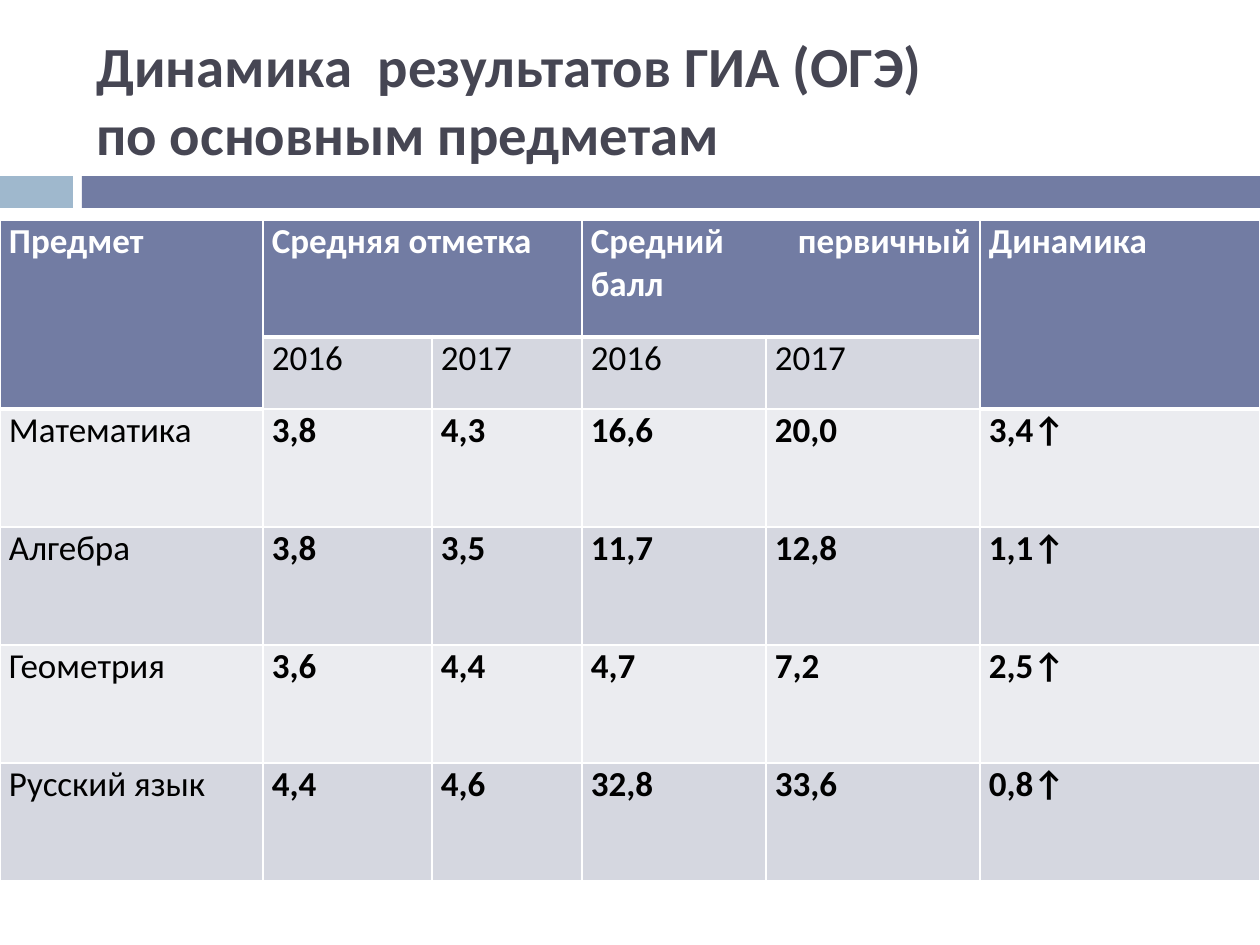
from lxml import etree
from pptx import Presentation
from pptx.dml.color import RGBColor as RGB
from pptx.enum.shapes import MSO_SHAPE as SHAPE
from pptx.enum.text import MSO_ANCHOR as ANCHOR, PP_ALIGN as ALIGN
from pptx.oxml.ns import qn
from pptx.util import Pt

EMU_PER_PX = 7257.143
FONT = "Calibri"
COLORS = {
    "title": "464653", "accent": "9FB8CD", "header": "727CA3",
    "band_dark": "D5D7E0", "band_light": "EBECF0",
    "white": "FFFFFF", "black": "000000",
}


def px(n):
    return round(n * EMU_PER_PX)


def set_border(cell, side, width):
    """Draw one white edge of a cell; side is L, R, T or B, width in points."""
    ln = etree.SubElement(cell._tc.get_or_add_tcPr(), qn(f"a:ln{side}"), w=str(Pt(width)))
    fill = etree.SubElement(ln, qn("a:solidFill"))
    etree.SubElement(fill, qn("a:srgbClr"), val=COLORS["white"])


prs = Presentation()
prs.slide_width, prs.slide_height = px(1260), px(945)
s = prs.slides.add_slide(prs.slide_layouts[6])

# Divider bar under the title
for left, width, color in [(0, 73, "accent"), (82, 1178, "header")]:
    sp = s.shapes.add_shape(SHAPE.RECTANGLE, px(left), px(176), px(width), px(32))
    sp.shadow.inherit = False
    sp.fill.solid()
    sp.fill.fore_color.rgb = RGB.from_string(COLORS[color])
    sp.line.fill.background()

# Title
tf = s.shapes.add_textbox(px(84), px(31), px(1124), px(136)).text_frame
tf.word_wrap = True
tf.vertical_anchor = ANCHOR.MIDDLE
p = tf.paragraphs[0]
p.text = "Динамика  результатов ГИА (ОГЭ)\vпо основным предметам"
for r in p.runs:
    r.font.name, r.font.size, r.font.bold = FONT, Pt(32.4), True
    r.font.color.rgb = RGB.from_string(COLORS["title"])

# Results table
rows = [
    ["Предмет", "Средняя отметка", "", "Средний первичный балл", "", "Динамика"],
    ["", "2016", "2017", "2016", "2017", ""],
    ["Математика", "3,8", "4,3", "16,6", "20,0", "3,4↑"],
    ["Алгебра", "3,8", "3,5", "11,7", "12,8", "1,1↑"],
    ["Геометрия", "3,6", "4,4", "4,7", "7,2", "2,5↑"],
    ["Русский язык", "4,4", "4,6", "32,8", "33,6", "0,8↑"],
]
col_widths = [263, 169, 150, 184, 214, 280]
row_heights = [117, 72] + [118] * 4
table = s.shapes.add_table(len(rows), len(col_widths), 0, px(220),
                           px(sum(col_widths)), px(sum(row_heights))).table
for col, width in zip(table.columns, col_widths):
    col.width = px(width)
for row, height in zip(table.rows, row_heights):
    row.height = px(height)

for i, texts in enumerate(rows):
    for j, text in enumerate(texts):
        cell = table.cell(i, j)
        header_depth = 2 if j in (0, 5) else 1
        is_header = i < header_depth
        cell.margin_left = cell.margin_right = px(9)
        cell.margin_top = cell.margin_bottom = 0

        set_border(cell, "L", 1)
        set_border(cell, "R", 1)
        set_border(cell, "T", 3 if i == header_depth else 1)
        set_border(cell, "B", 3 if is_header else 1)
        band = "header" if is_header else "band_dark" if i % 2 else "band_light"
        cell.fill.solid()
        cell.fill.fore_color.rgb = RGB.from_string(COLORS[band])

        p = cell.text_frame.paragraphs[0]
        p.text = text
        p.alignment = ALIGN.JUSTIFY
        for r in p.runs:
            r.font.name, r.font.size = FONT, Pt(20)
            r.font.bold = is_header or (i > 1 and j > 0)
            r.font.color.rgb = RGB.from_string(COLORS["white" if is_header else "black"])

for top, left, bottom, right in [(0, 0, 1, 0), (0, 1, 0, 2), (0, 3, 0, 4), (0, 5, 1, 5)]:
    table.cell(top, left).merge(table.cell(bottom, right))

prs.save("out.pptx")
